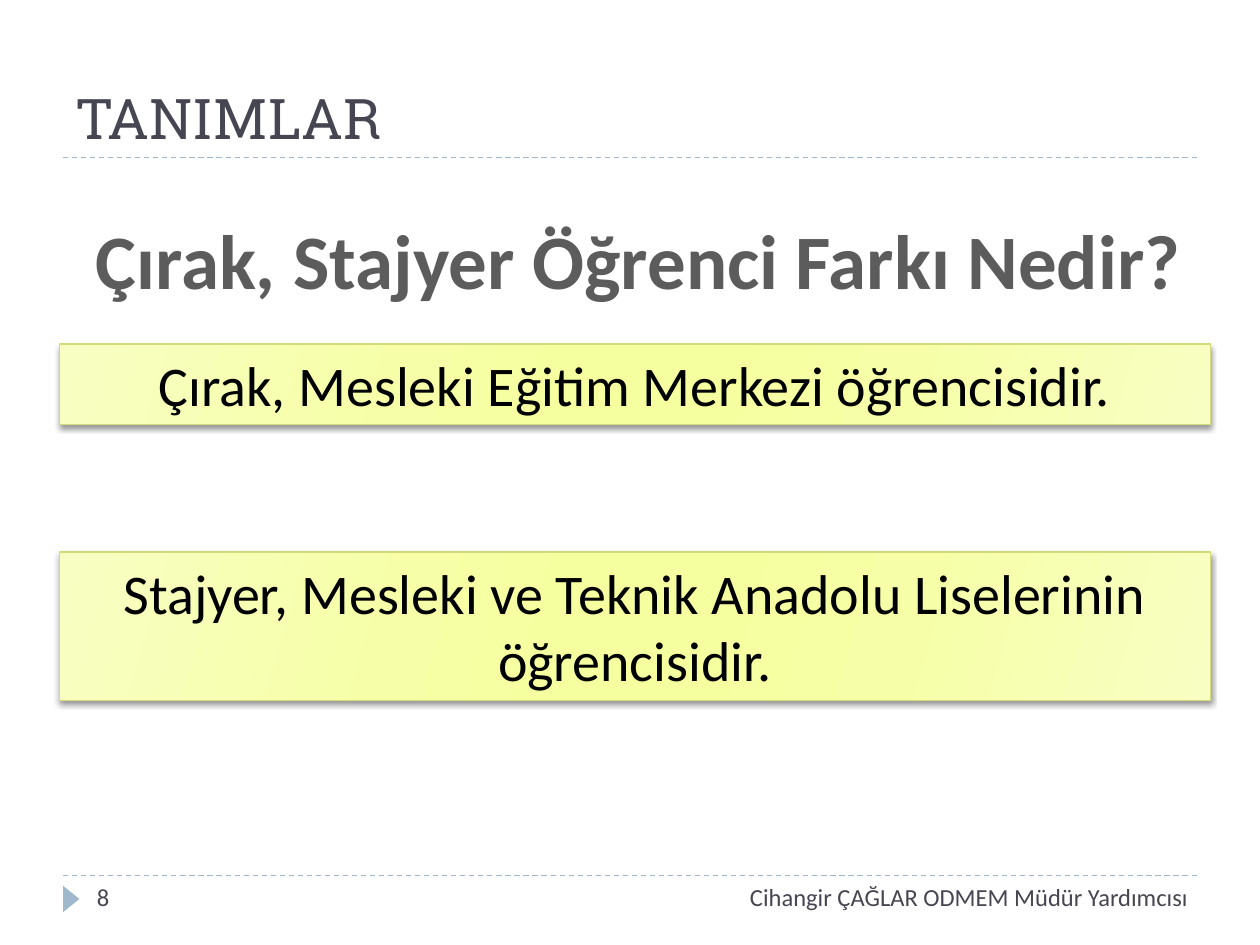
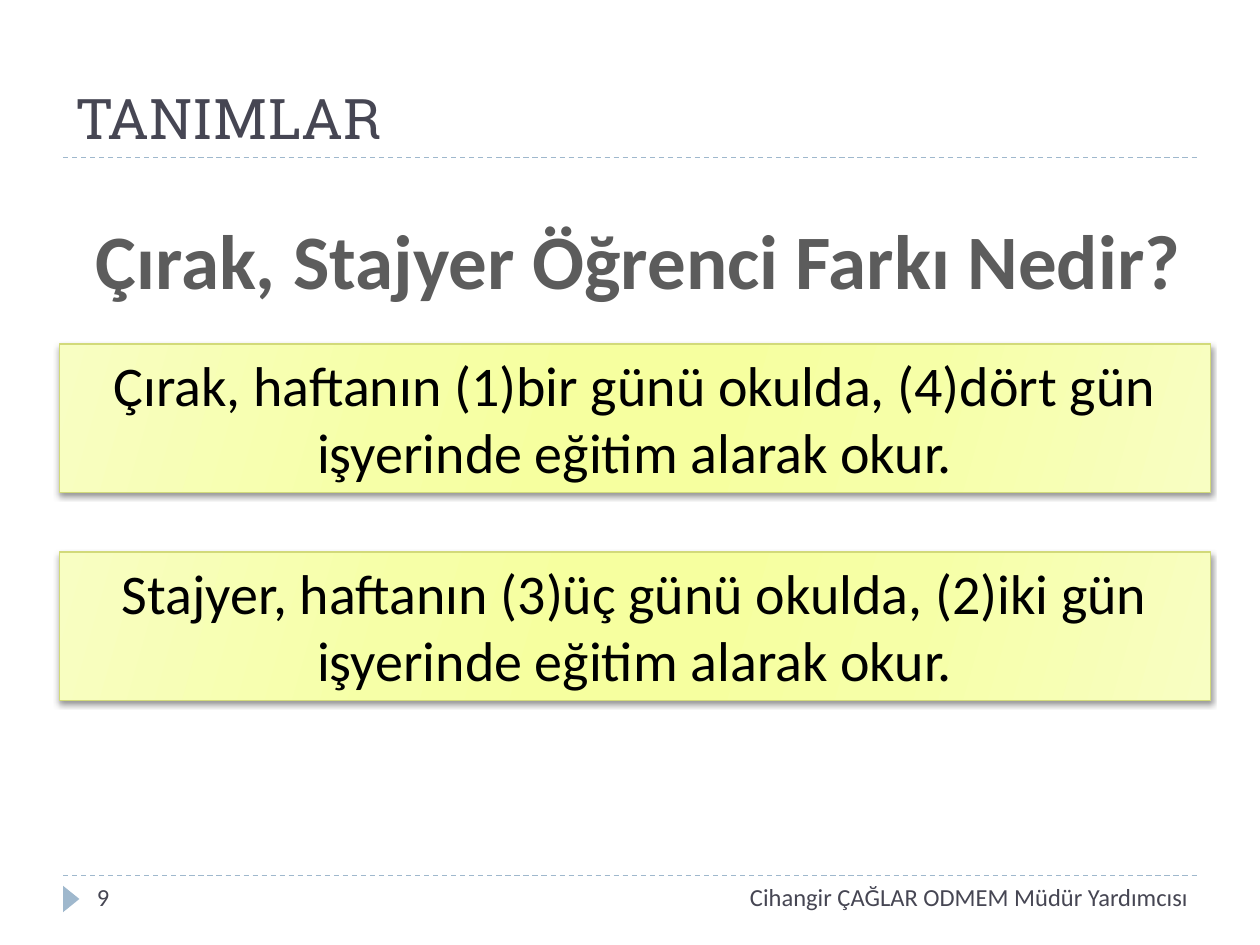
from lxml.etree import SubElement
from pptx import Presentation
from pptx.dml.color import RGBColor
from pptx.enum.dml import MSO_LINE_DASH_STYLE as Dash
from pptx.enum.shapes import MSO_CONNECTOR as Connector, MSO_SHAPE as Shape
from pptx.enum.text import MSO_ANCHOR as Anchor, MSO_AUTO_SIZE as AutoSize, PP_ALIGN as Align
from pptx.oxml.ns import qn
from pptx.util import Inches, Pt

SLATE = RGBColor(0x46, 0x46, 0x53)
BLUE = RGBColor(0x9F, 0xB8, 0xCD)
GREY = RGBColor(0x5C, 0x5C, 0x5C)
BLACK = RGBColor(0x00, 0x00, 0x00)
OLIVE = RGBColor(0xD2, 0xDA, 0x7A)
PALE_LIME = RGBColor(0xF8, 0xFE, 0xC2)
MID_LIME = RGBColor(0xF6, 0xFF, 0xA7)
LIME = RGBColor(0xF6, 0xFF, 0x9F)
LIME_STOPS = [(0, PALE_LIME), (30, MID_LIME), (45, LIME),
              (55, LIME), (73, MID_LIME), (100, PALE_LIME)]

MARGIN, CONTENT_WIDTH = 0.5, 9
TITLE_RULE, FOOTER_RULE = 1.25, 6.95
BOX_LEFT, BOX_WIDTH = 0.47, 9.14
BOX_TOPS = [2.73, 4.38]
LINE_HEIGHT, BOX_PADDING = 0.54, 0.1

TITLE = "TANIMLAR"
QUESTION = "Çırak, Stajyer Öğrenci Farkı Nedir?"
FOOTER = "Cihangir ÇAĞLAR ODMEM Müdür Yardımcısı"
FIRST_NUMBER = 8
# Each slide holds (statement, number of text lines) for the apprentice and the intern.
STATEMENTS = [
    [("Çırak, Mesleki Eğitim Merkezi öğrencisidir.", 1),
     ("Stajyer, Mesleki ve Teknik Anadolu Liselerinin öğrencisidir.", 2)],
    [("Çırak, haftanın (1)bir günü okulda, (4)dört gün işyerinde eğitim alarak okur.", 2),
     ("Stajyer, haftanın (3)üç günü okulda, (2)iki gün işyerinde eğitim alarak okur.", 2)],
]


def write(shape, text, size, color=SLATE, font="Calibri", bold=False,
          align=Align.LEFT, anchor=Anchor.TOP, wrap=True, fit=AutoSize.NONE):
    frame = shape.text_frame
    frame.word_wrap = wrap
    frame.auto_size = fit
    frame.vertical_anchor = anchor
    para = frame.paragraphs[0]
    para.alignment = align
    span = para.add_run()
    span.text = text
    span.font.name, span.font.size, span.font.bold = font, Pt(size), bold
    span.font.color.rgb = color


def style_lime_box(box):
    """Give the box its six-stop gradient, olive outline and soft shadow."""
    box.line.color.rgb = OLIVE
    box.line.width = Pt(0.75)
    box.fill.gradient()
    box.fill.gradient_angle = 360 - 16
    stops = box.element.spPr.find(".//" + qn("a:gsLst"))
    for stop in list(stops):
        stops.remove(stop)
    for position, color in LIME_STOPS:
        stop = SubElement(stops, qn("a:gs"), pos=str(position * 1000))
        SubElement(stop, qn("a:srgbClr"), val=str(color))
    box.shadow.inherit = False
    effects = box.element.spPr.find(qn("a:effectLst"))
    shadow = SubElement(effects, qn("a:outerShdw"), blurRad=str(Pt(3)), dist=str(Pt(2)),
                        dir=str(90 * 60000), rotWithShape="0")
    shade = SubElement(shadow, qn("a:srgbClr"), val=str(BLACK))
    SubElement(shade, qn("a:alpha"), val="40000")


deck = Presentation()
deck.slide_width, deck.slide_height = Inches(10), Inches(7.5)
layout = deck.slide_layouts.get_by_name("Title Only")
layout_title = layout.placeholders[0]
layout_title.left, layout_title.top = Inches(MARGIN), Inches(0.17)
layout_title.width, layout_title.height = Inches(CONTENT_WIDTH), Inches(1.08)

pages = [deck.slides.add_slide(layout) for _ in STATEMENTS]

# The rules and the footer marker are drawn once and moved to the shared layout.
decorations = []
for rule_top in (FOOTER_RULE, TITLE_RULE):
    rule = pages[0].shapes.add_connector(
        Connector.STRAIGHT, Inches(MARGIN), Inches(rule_top),
        Inches(MARGIN + CONTENT_WIDTH), Inches(rule_top))
    rule.line.color.rgb = BLUE
    rule.line.width = Pt(0.75)
    rule.line.dash_style = Dash.DASH
    SubElement(rule._element.spPr, qn("a:effectLst"))
    decorations.append(rule)
marker = pages[0].shapes.add_shape(
    Shape.ISOSCELES_TRIANGLE, Inches(0.46), Inches(7.07), Inches(0.21), Inches(0.13))
marker.rotation = 90
marker.fill.solid()
marker.fill.fore_color.rgb = BLUE
marker.line.fill.background()
marker.shadow.inherit = False
decorations.append(marker)
for decoration in decorations:
    layout.shapes._spTree.append(decoration._element)

for number, (page, statements) in enumerate(zip(pages, STATEMENTS), FIRST_NUMBER):
    write(page.shapes.title, TITLE, 32, font="Roboto Slab", anchor=Anchor.BOTTOM)

    question = page.shapes.add_textbox(Inches(0.62), Inches(1.64), Inches(8.9), Inches(0.84))
    write(question, QUESTION, 44, color=GREY, bold=True, align=Align.CENTER,
          wrap=False, fit=AutoSize.SHAPE_TO_FIT_TEXT)

    for top, (statement, lines) in zip(BOX_TOPS, statements):
        box = page.shapes.add_shape(
            Shape.RECTANGLE, Inches(BOX_LEFT), Inches(top),
            Inches(BOX_WIDTH), Inches(lines * LINE_HEIGHT + BOX_PADDING))
        style_lime_box(box)
        write(box, statement, 32, color=BLACK, align=Align.CENTER,
              fit=AutoSize.SHAPE_TO_FIT_TEXT)

    for left, width, text, align in [(0.67, 2.17, str(number), Align.LEFT),
                                     (5.7, 3.83, FOOTER, Align.RIGHT)]:
        label = page.shapes.add_textbox(
            Inches(left), Inches(FOOTER_RULE), Inches(width), Inches(0.4))
        write(label, text, 14, align=align)

deck.save("out.pptx")
